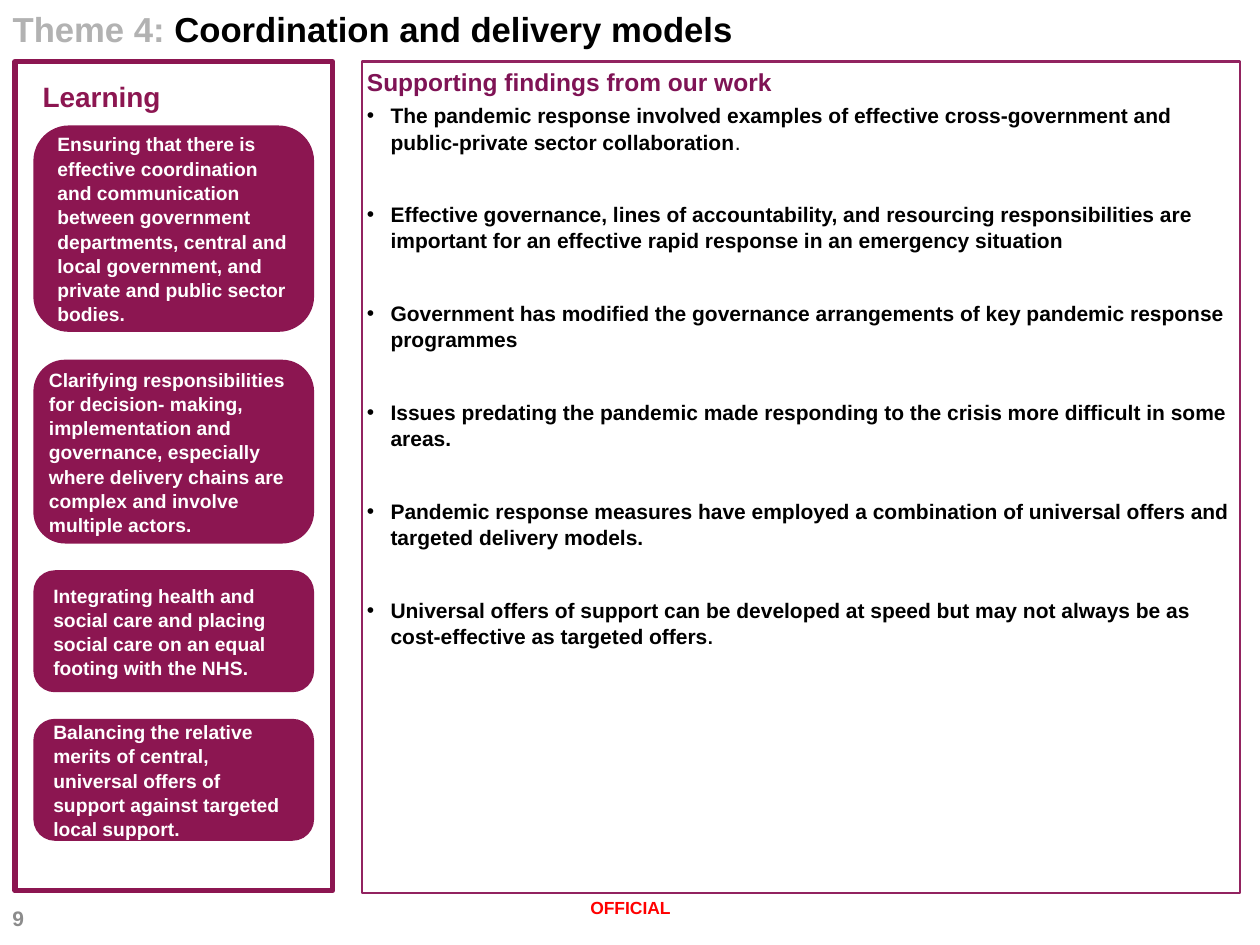
from pptx import Presentation
from pptx.dml.color import RGBColor
from pptx.enum.shapes import MSO_SHAPE as Shape
from pptx.enum.text import MSO_ANCHOR as Anchor, MSO_AUTO_SIZE as Fit, PP_ALIGN as Align
from pptx.oxml.ns import qn
from pptx.util import Pt
from lxml.etree import SubElement

HUES = {
    "plum": "8C1651", "edge": "922360", "head": "7F1355", "grey": "B2B2B2",
    "page": "8C8C8C", "red": "FF0000", "black": "000000", "white": "FFFFFF",
}

LESSONS = [
    (72.7, 115.9, 7.2, "Ensuring that there is effective coordination and communication between "
     "government departments, central and local government, and private and public sector bodies."),
    (206.6, 103, 2.9, "Clarifying responsibilities for decision- making, implementation and "
     "governance, especially where delivery chains are complex and involve multiple actors."),
    (326.9, 67.7, 7.2, "Integrating health and social care and placing social care on an equal "
     "footing with the NHS."),
    (411.8, 67.7, 7.2, "Balancing the relative merits of central, universal offers of support "
     "against targeted local support."),
]

# Text of each finding, then its closing stop and the format of that stop
FINDINGS = [
    ("The pandemic response involved examples of effective cross-government and "
     "public-private sector collaboration", ".", {"bold": False}),
    ("Effective governance, lines of accountability, and resourcing responsibilities are "
     "important for an effective rapid response in an emergency situation", "", {}),
    ("Government has modified the governance arrangements of key pandemic response "
     "programmes", "", {}),
    ("Issues predating the pandemic made responding to the crisis more difficult in some "
     "areas", ".", {}),
    ("Pandemic response measures have employed a combination of universal offers and "
     "targeted delivery models", ".", {}),
    ("Universal offers of support can be developed at speed but may not always be as "
     "cost-effective as targeted offers", ".", {"size": 10.5}),
]


def hue(name):
    return RGBColor.from_string(HUES[name])


def write(para, text, size=12, color="black", bold=True):
    run = para.add_run()
    run.text = text
    font = run.font
    font.name, font.size, font.bold = "Arial", Pt(size), bold
    font.color.rgb = hue(color)


def place(shape, box):
    shape.left, shape.top, shape.width, shape.height = map(Pt, box)


def setup(frame, side=7.2, edge=3.6, anchor=Anchor.TOP):
    frame.word_wrap = True
    frame.auto_size = Fit.NONE
    frame.vertical_anchor = anchor
    frame.margin_left = frame.margin_right = Pt(side)
    frame.margin_top = frame.margin_bottom = Pt(edge)
    return frame.paragraphs[0]


def space(para, after=0, line=1.0):
    para.alignment = Align.LEFT
    para.space_before, para.space_after = Pt(0), Pt(after)
    para.line_spacing = line


def mark(para, char=None, indent=0):
    """Set a hanging bullet, or none when no character is given."""
    props = para._p.get_or_add_pPr()
    props.set("marL", str(Pt(indent)))
    props.set("indent", str(-Pt(indent)))
    if char:
        SubElement(props, qn("a:buFont")).set("typeface", "Arial")
        SubElement(props, qn("a:buChar")).set("char", char)
    else:
        SubElement(props, qn("a:buNone"))


def label(slide, box, text, align=Align.LEFT, anchor=Anchor.TOP, **style):
    para = setup(slide.shapes.add_textbox(*map(Pt, box)).text_frame, anchor=anchor)
    para.alignment = align
    write(para, text, **style)


def block(slide, kind, box, width, fill=None):
    shape = slide.shapes.add_shape(kind, *map(Pt, box))
    shape.shadow.inherit = False
    shape.line.color.rgb = hue("plum")
    shape.line.width = Pt(width)
    if fill:
        shape.fill.solid()
        shape.fill.fore_color.rgb = hue(fill)
    else:
        shape.fill.background()
    return shape


def heading(slide, box):
    title = slide.shapes.title
    place(title, box)
    para = setup(title.text_frame)
    space(para)
    write(para, "Theme 4:", size=19.8, color="grey")
    write(para, " Coordination and delivery models", size=19.8)


def findings(slide, box):
    body = slide.placeholders[1]
    place(body, box)
    body.line.color.rgb = hue("edge")
    body.line.width = Pt(1.5)
    frame = body.text_frame
    para = setup(frame, side=2.9, edge=2.9)
    space(para, after=3)
    mark(para)
    write(para, "Supporting findings from our work", size=14, color="head")
    for text, stop, style in FINDINGS:
        para = frame.add_paragraph()
        space(para, after=26.3, line=1.05)
        mark(para, "•", 13.5)
        write(para, text)
        if stop:
            write(para, stop, **style)


def learning(slide, box):
    left, top, width, _ = box
    label(slide, (left + 8.7, top + 6.5, 108, 26.6), "Learning", size=16, color="plum")
    block(slide, Shape.RECTANGLE, box, 3)
    for y, tall, side, text in LESSONS:
        card = block(slide, Shape.ROUNDED_RECTANGLE,
                     (left + 11.5, y, width - 23, tall), 2, "plum")
        para = setup(card.text_frame, side=side, anchor=Anchor.MIDDLE)
        space(para, line=1.05)
        write(para, text, size=11, color="white")


def footer(slide, top):
    label(slide, (0, top + 1.4, 167.8, 28.8), "9", anchor=Anchor.MIDDLE, color="page")
    label(slide, (246.2, top, 228.2, 28.8), "OFFICIAL", align=Align.CENTER,
          size=10, color="red")


def main():
    deck = Presentation()
    deck.slide_width, deck.slide_height = Pt(720), Pt(540)
    slide = deck.slides.add_slide(deck.slide_layouts[1])
    heading(slide, (0, 0.7, 720, 42.5))
    findings(slide, (206.8, 35.2, 501.8, 475))
    learning(slide, (8.6, 35.2, 181.4, 473.8))
    footer(slide, 509)
    deck.save("out.pptx")


if __name__ == "__main__":
    main()
